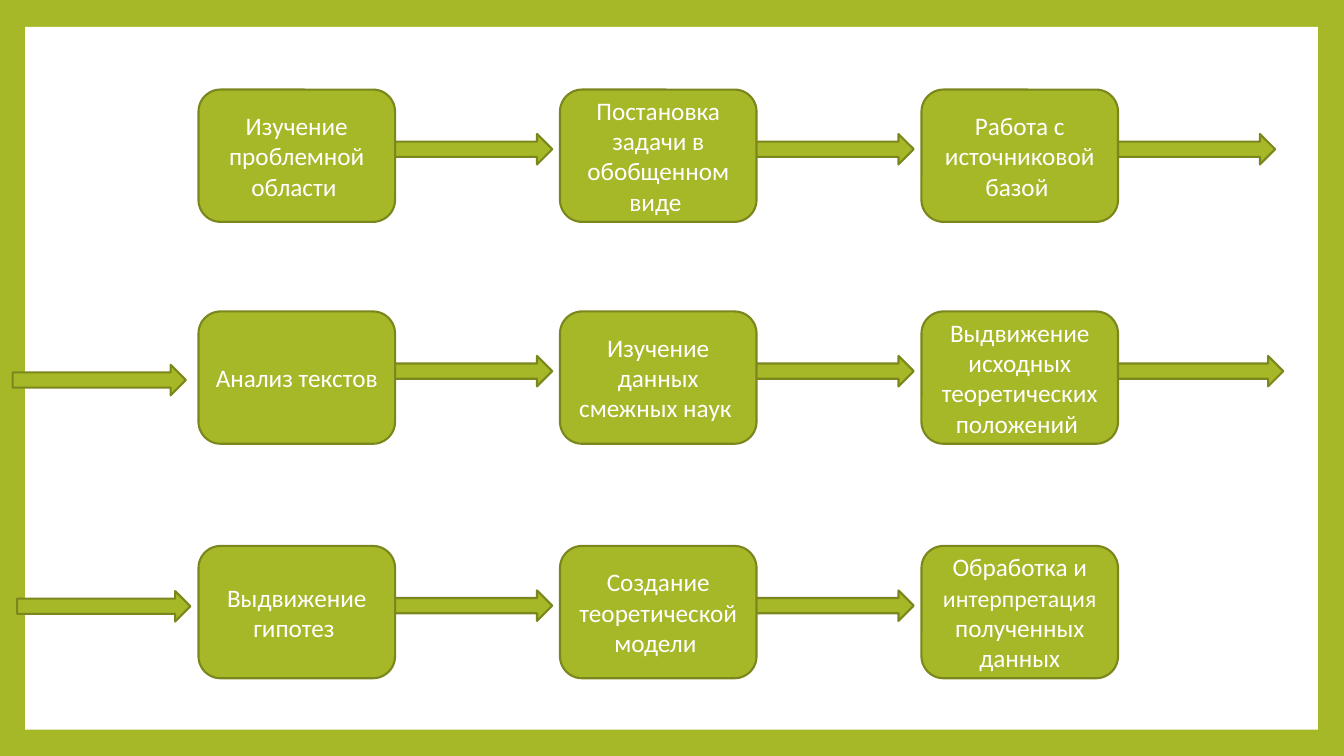
from pptx import Presentation
from pptx.dml.color import RGBColor
from pptx.enum.shapes import MSO_SHAPE as Shape
from pptx.enum.text import MSO_ANCHOR as Anchor, PP_ALIGN as Align
from pptx.util import Pt

GREEN, DARK_GREEN, WHITE = "A6B727", "7B871D", "FFFFFF"
SLIDE_WIDTH, SLIDE_HEIGHT = 960, 540
STEP_WIDTH, STEP_HEIGHT, STEP_PITCH = 140.4, 94.5, 258.2
ARROW_WIDTH, ARROW_HEIGHT = 123.8, 21.8
ARROW_SHIFT, ARROW_DROP = 128.9, 31.7
ROWS_LEFT = 141.8

ROWS = [
    {
        "top": 64,
        "steps": [
            [("Изучение проблемной области ", 18)],
            [("Постановка задачи в обобщенном виде ", 18)],
            [("Работа с источниковой базой ", 18)],
        ],
        "entry": None,
        "exit_shift": ARROW_SHIFT,
    },
    {
        "top": 222.5,
        "steps": [
            [("Анализ текстов ", 18)],
            [("Изучение данных смежных наук ", 18)],
            [("Выдвижение исходных теоретических положений ", 18)],
        ],
        "entry": (-132.8, 38.1),
        "exit_shift": 134.7,
    },
    {
        "top": 390,
        "steps": [
            [("Выдвижение гипотез ", 18)],
            [("Создание теоретической модели ", 18)],
            [("Обработка и ", 18), ("интерпретация", 17), (" полученных данных", 18)],
        ],
        "entry": (-129.6, 32.2),
        "exit_shift": None,
    },
]


def color(value):
    return RGBColor.from_string(value)


def add_block(slide, kind, left, top, width, height, fill=GREEN, line=DARK_GREEN):
    shape = slide.shapes.add_shape(kind, Pt(left), Pt(top), Pt(width), Pt(height))
    shape.shadow.inherit = False
    shape.fill.solid()
    shape.fill.fore_color.rgb = color(fill)
    if line:
        shape.line.color.rgb = color(line)
        shape.line.width = Pt(1.5)
    else:
        shape.line.fill.background()
    return shape


def add_arrow(slide, left, top):
    add_block(slide, Shape.RIGHT_ARROW, left, top, ARROW_WIDTH, ARROW_HEIGHT)


def add_step(slide, left, top, parts):
    shape = add_block(slide, Shape.ROUNDED_RECTANGLE, left, top, STEP_WIDTH, STEP_HEIGHT)
    text_frame = shape.text_frame
    text_frame.word_wrap = True
    text_frame.vertical_anchor = Anchor.MIDDLE
    paragraph = text_frame.paragraphs[0]
    paragraph.alignment = Align.CENTER
    for text, size in parts:
        run = paragraph.add_run()
        run.text = text
        run.font.name = "Calibri"
        run.font.size = Pt(size)
        run.font.color.rgb = color(WHITE)


def add_row(slide, left, top, steps, entry, exit_shift):
    lefts = [left + index * STEP_PITCH for index in range(len(steps))]
    if entry:
        add_arrow(slide, left + entry[0], top + entry[1])
    for step_left in lefts[:-1]:
        add_arrow(slide, step_left + ARROW_SHIFT, top + ARROW_DROP)
    if exit_shift:
        add_arrow(slide, lefts[-1] + exit_shift, top + ARROW_DROP)
    for step_left, parts in zip(lefts, steps):
        add_step(slide, step_left, top, parts)


def add_frame(slide, left, top, width, height):
    slide.background.fill.solid()
    slide.background.fill.fore_color.rgb = color(GREEN)
    add_block(slide, Shape.RECTANGLE, left, top, width, height, WHITE, None)


def main():
    presentation = Presentation()
    presentation.slide_width = Pt(SLIDE_WIDTH)
    presentation.slide_height = Pt(SLIDE_HEIGHT)
    slide = presentation.slides.add_slide(presentation.slide_layouts[6])
    add_frame(slide, 18, 19.2, 923.4, 502)
    for row in ROWS:
        add_row(slide, ROWS_LEFT, **row)
    presentation.save("out.pptx")


if __name__ == "__main__":
    main()
